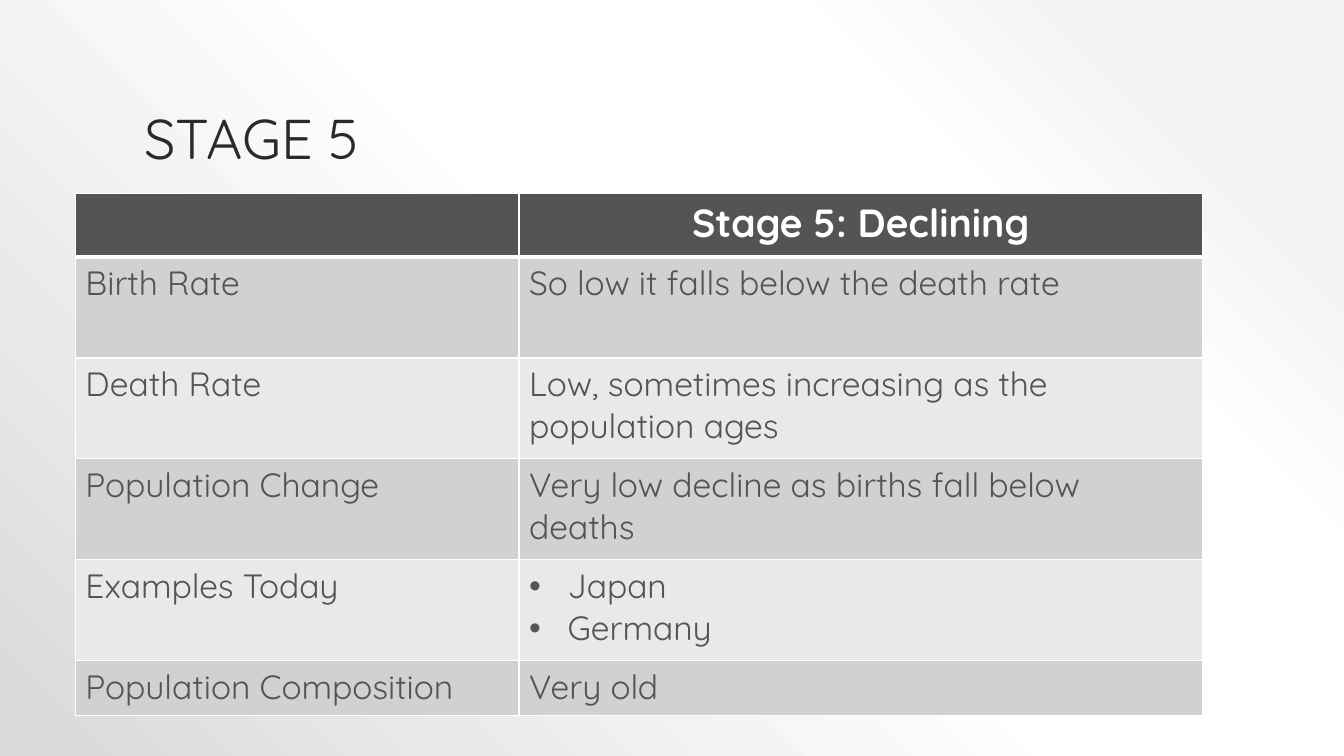
"""Build the slide on stage 5 of the demographic transition."""
import lxml.etree
import pptx
import pptx.dml.color
import pptx.enum.text
import pptx.oxml
import pptx.oxml.ns
import pptx.util

Cm = pptx.util.Cm
Pt = pptx.util.Pt
qn = pptx.oxml.ns.qn

TITLE = "STAGE 5"
ROWS = [
    ("", ["Stage 5: Declining"]),
    ("Birth Rate", ["So low it falls below the death rate"]),
    ("Death Rate", ["Low, sometimes increasing as the population ages"]),
    ("Population Change", ["Very low decline as births fall below deaths"]),
    ("Examples Today", ["Japan", "Germany"]),
    ("Population Composition", ["Very old"]),
]
COLUMN_WIDTHS = [11.18, 17.22]
ROW_HEIGHTS = [1.6, 2.54, 2.54, 2.54, 2.54, 1.4]
GRADIENT = [(10, "F2F2F2"), (28, "FFFFFF"), (48, "FFFFFF"), (100, "D9D9D9")]
FONT = "Quicksand"
WHITE, DARK, BLACK = "FFFFFF", "545454", "2A2A2A"
BANDS = ["E9E9E9", "D1D1D1"]
NAMESPACE = 'xmlns:a="http://schemas.openxmlformats.org/drawingml/2006/main"'


def colour(value):
    return pptx.dml.color.RGBColor.from_string(value)


def write(frame, lines, size=24, fill=DARK, bold=False, align=None, spacing=None, bullets=False):
    for index, line in enumerate(lines):
        para = frame.add_paragraph() if index else frame.paragraphs[0]
        para.alignment = align
        para.line_spacing = spacing
        if bullets:
            properties = para._p.get_or_add_pPr()
            properties.set("marL", str(Cm(0.97)))
            properties.set("indent", str(-Cm(0.97)))
            for tag, key, value in [("a:buFont", "typeface", "Arial"), ("a:buChar", "char", "•")]:
                lxml.etree.SubElement(properties, qn(tag)).set(key, value)
        span = para.add_run()
        span.text = line
        span.font.name = FONT
        span.font.size = Pt(size)
        span.font.bold = bold
        span.font.color.rgb = colour(fill)


def paint_background(page):
    fill = page.background.fill
    fill.gradient()
    gradient = page._element.find(".//" + qn("a:gradFill"))
    for child in list(gradient):
        gradient.remove(child)
    stops = "".join(
        f'<a:gs pos="{place * 1000}"><a:srgbClr val="{value}"/></a:gs>' for place, value in GRADIENT
    )
    source = pptx.oxml.parse_xml(
        f'<a:gradFill {NAMESPACE}><a:gsLst>{stops}</a:gsLst><a:path path="circle">'
        '<a:fillToRect l="100000" b="100000"/></a:path></a:gradFill>'
    )
    gradient.extend(list(source))


def add_borders(cell, row):
    widths = {"lnL": 1, "lnR": 1, "lnT": 3 if row == 1 else 1, "lnB": 3 if row == 0 else 1}
    properties = cell._tc.get_or_add_tcPr()
    for index, (tag, width) in enumerate(widths.items()):
        properties.insert(index, pptx.oxml.parse_xml(
            f'<a:{tag} {NAMESPACE} w="{Pt(width)}"><a:solidFill><a:srgbClr val="{WHITE}"/>'
            f'</a:solidFill></a:{tag}>'
        ))


def add_title(page):
    frame = page.shapes.add_textbox(Cm(3.39), Cm(0.76), Cm(27.09), Cm(3.68)).text_frame
    frame.word_wrap = True
    frame.vertical_anchor = pptx.enum.text.MSO_ANCHOR.BOTTOM
    write(frame, [TITLE], size=40, fill=BLACK, spacing=0.9)


def add_stage_table(page):
    table = page.shapes.add_table(
        len(ROWS), len(COLUMN_WIDTHS), Cm(1.9), Cm(4.88),
        Cm(sum(COLUMN_WIDTHS)), Cm(sum(ROW_HEIGHTS)),
    ).table
    for column, width in zip(table.columns, COLUMN_WIDTHS):
        column.width = Cm(width)
    for row, (label, lines) in enumerate(ROWS):
        table.rows[row].height = Cm(ROW_HEIGHTS[row])
        for column, content in enumerate([[label], lines]):
            cell = table.cell(row, column)
            cell.fill.solid()
            cell.fill.fore_color.rgb = colour(BANDS[row % 2] if row else DARK)
            add_borders(cell, row)
            if row:
                write(cell.text_frame, content, bullets=len(content) > 1)
            elif content[0]:
                write(cell.text_frame, content, size=28, fill=WHITE, bold=True,
                      align=pptx.enum.text.PP_ALIGN.CENTER)


def main():
    deck = pptx.Presentation()
    deck.slide_width, deck.slide_height = Cm(33.87), Cm(19.05)
    page = deck.slides.add_slide(deck.slide_layouts[6])
    paint_background(page)
    add_title(page)
    add_stage_table(page)
    deck.save("out.pptx")


if __name__ == "__main__":
    main()
